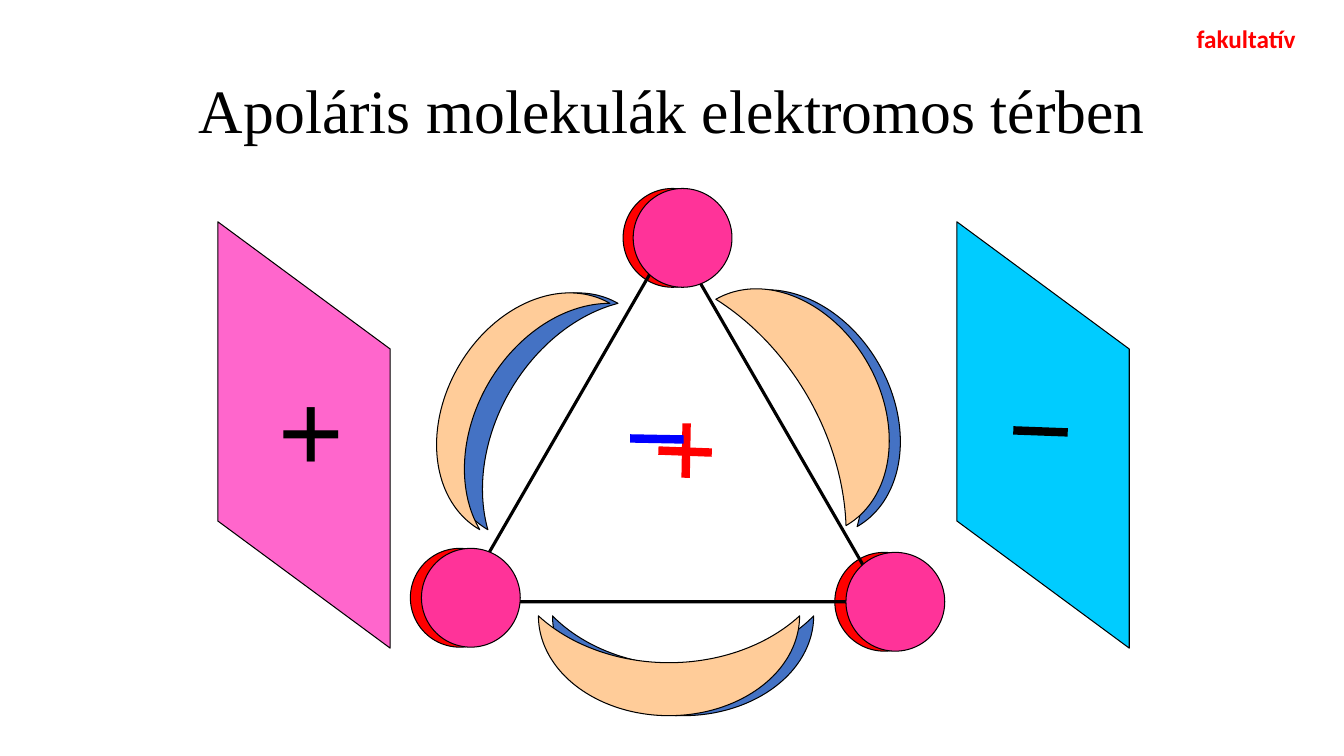
"""Build a slide showing apolar molecules in an electric field."""
from dataclasses import dataclass

from pptx import Presentation
from pptx.dml.color import RGBColor
from pptx.enum.shapes import MSO_CONNECTOR, MSO_SHAPE
from pptx.enum.text import MSO_ANCHOR, PP_ALIGN
from pptx.oxml.ns import qn
from pptx.shapes.autoshape import Shape
from pptx.slide import Slide
from pptx.util import Inches, Pt
from lxml.etree import SubElement

BLACK = RGBColor(0x00, 0x00, 0x00)
RED = RGBColor(0xFF, 0x00, 0x00)
BLUE = RGBColor(0x00, 0x00, 0xFF)
ROSE = RGBColor(0xFF, 0x33, 0x99)
STEEL = RGBColor(0x44, 0x72, 0xC4)
PEACH = RGBColor(0xFF, 0xCC, 0x99)
PINK = RGBColor(0xFF, 0x66, 0xCC)
CYAN = RGBColor(0x00, 0xCC, 0xFF)

ATOM_SIZE = 0.98
CLOUD_SIZE = (0.99, 2.59)
PLATE_SIZE = (4.23, 1.71)
PLATE_TOP = 3.46


@dataclass(frozen=True)
class Figure:
    kind: MSO_SHAPE
    left: float
    top: float
    width: float
    height: float
    fill: RGBColor | None = None
    rotation: float = 0
    adjustment: float | None = None
    flipped: bool = False
    line_width: float = 0.75


@dataclass(frozen=True)
class Bar:
    start: tuple[float, float]
    end: tuple[float, float]
    color: RGBColor


def atom(left: float, top: float, fill: RGBColor) -> Figure:
    return Figure(MSO_SHAPE.OVAL, left, top, ATOM_SIZE, ATOM_SIZE, fill)


def cloud(left: float, top: float, fill: RGBColor, rotation: float,
          thickness: float, flipped: bool = False) -> Figure:
    return Figure(MSO_SHAPE.MOON, left, top, *CLOUD_SIZE, fill, rotation, thickness, flipped)


def plate(left: float, fill: RGBColor) -> Figure:
    return Figure(MSO_SHAPE.PARALLELOGRAM, left, PLATE_TOP, *PLATE_SIZE, fill, 270, 0.738)


RESTING_MOLECULE = [
    atom(4.07, 5.44, RED),
    atom(6.18, 1.87, RED),
    atom(8.28, 5.48, RED),
    Figure(MSO_SHAPE.ISOSCELES_TRIANGLE, 4.57, 2.33, 4.2, 3.64, line_width=2.25),
    cloud(4.56, 2.59, STEEL, 29.9, 0.5),
    cloud(7.79, 2.56, STEEL, 330.1, 0.5, flipped=True),
    cloud(6.28, 5.31, STEEL, 270, 0.5),
]
POLARIZED_MOLECULE = [
    atom(4.18, 5.44, ROSE),
    atom(8.39, 5.48, ROSE),
    atom(6.28, 1.87, ROSE),
    cloud(4.48, 2.59, PEACH, 29.9, 0.344),
    cloud(7.68, 2.55, PEACH, 330.1, 0.688, flipped=True),
    cloud(6.14, 5.31, PEACH, 270, 0.531),
]
CHARGE_BARS = [
    Bar((10.05, 4.27), (10.59, 4.29), BLACK),
    Bar((6.53, 4.47), (7.06, 4.49), RED),
    Bar((6.81, 4.2), (6.8, 4.74), RED),
    Bar((6.25, 4.35), (6.78, 4.36), BLUE),
]


def draw_figure(slide: Slide, figure: Figure) -> Shape:
    shape = slide.shapes.add_shape(
        figure.kind, Inches(figure.left), Inches(figure.top),
        Inches(figure.width), Inches(figure.height))
    shape.shadow.inherit = False
    shape.rotation = figure.rotation
    if figure.adjustment is not None:
        shape.adjustments[0] = figure.adjustment
    if figure.flipped:
        shape.element.spPr.get_or_add_xfrm().set("flipH", "1")
    if figure.fill is None:
        shape.fill.background()
    else:
        shape.fill.solid()
        shape.fill.fore_color.rgb = figure.fill
    shape.line.color.rgb = BLACK
    shape.line.width = Pt(figure.line_width)
    return shape


def draw_bar(slide: Slide, bar: Bar) -> None:
    connector = slide.shapes.add_connector(
        MSO_CONNECTOR.STRAIGHT, *map(Inches, bar.start + bar.end))
    connector.line.color.rgb = bar.color
    connector.line.width = Pt(6)
    SubElement(connector.element.spPr, qn("a:effectLst"))


def write_text(shape: Shape, text: str, *, font: str, size: float,
               color: RGBColor = BLACK, bold: bool = False, wrap: bool = False,
               align: PP_ALIGN = PP_ALIGN.CENTER, spacing: float = 1.0,
               anchor: MSO_ANCHOR = MSO_ANCHOR.MIDDLE) -> None:
    frame = shape.text_frame
    frame.word_wrap = wrap
    frame.vertical_anchor = anchor
    paragraph = frame.paragraphs[0]
    paragraph.alignment = align
    paragraph.line_spacing = spacing
    run = paragraph.add_run()
    run.text = text
    run.font.name = font
    run.font.size = Pt(size)
    run.font.bold = bold
    run.font.color.rgb = color


def add_text_box(slide: Slide, left: float, top: float, width: float, height: float) -> Shape:
    return slide.shapes.add_textbox(Inches(left), Inches(top), Inches(width), Inches(height))


def main() -> None:
    presentation = Presentation()
    presentation.slide_width = Inches(13.33)
    presentation.slide_height = Inches(7.5)
    slide = presentation.slides.add_slide(presentation.slide_layouts[6])

    for figure in RESTING_MOLECULE:
        draw_figure(slide, figure)
    title = add_text_box(slide, 0.92, 0.4, 11.5, 1.45)
    write_text(title, "Apoláris molekulák elektromos térben",
               font="Times New Roman", size=44, wrap=True, spacing=0.9)
    for figure in POLARIZED_MOLECULE:
        draw_figure(slide, figure)

    positive_plate = draw_figure(slide, plate(0.9, PINK))
    write_text(positive_plate, "+", font="Arial", size=80)
    draw_figure(slide, plate(8.23, CYAN))
    for bar in CHARGE_BARS:
        draw_bar(slide, bar)

    label = add_text_box(slide, 11.77, 0.18, 1.19, 0.4)
    write_text(label, "fakultatív", font="Calibri", size=18, color=RED, bold=True,
               align=PP_ALIGN.LEFT, anchor=MSO_ANCHOR.TOP)
    presentation.save("out.pptx")


if __name__ == "__main__":
    main()
